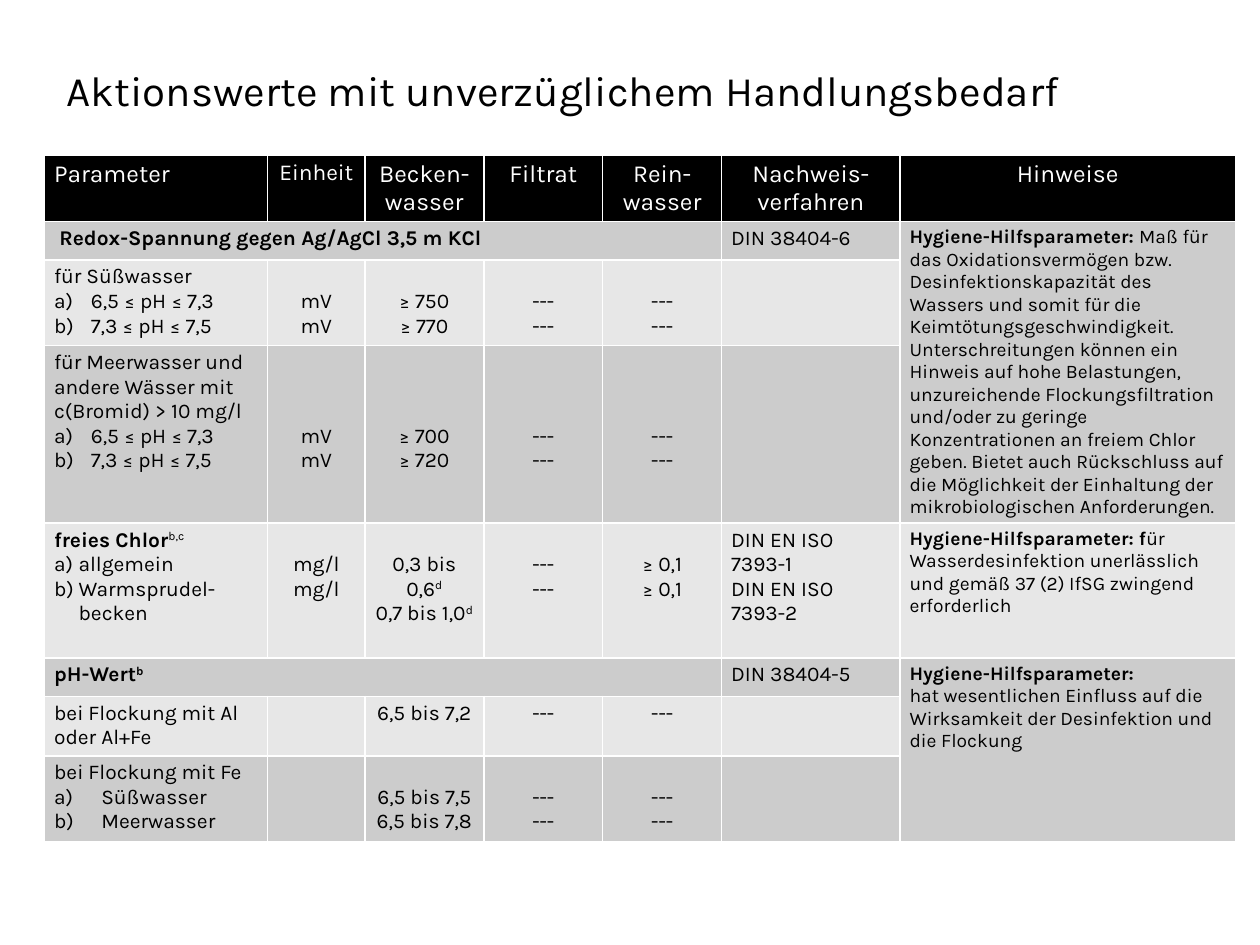
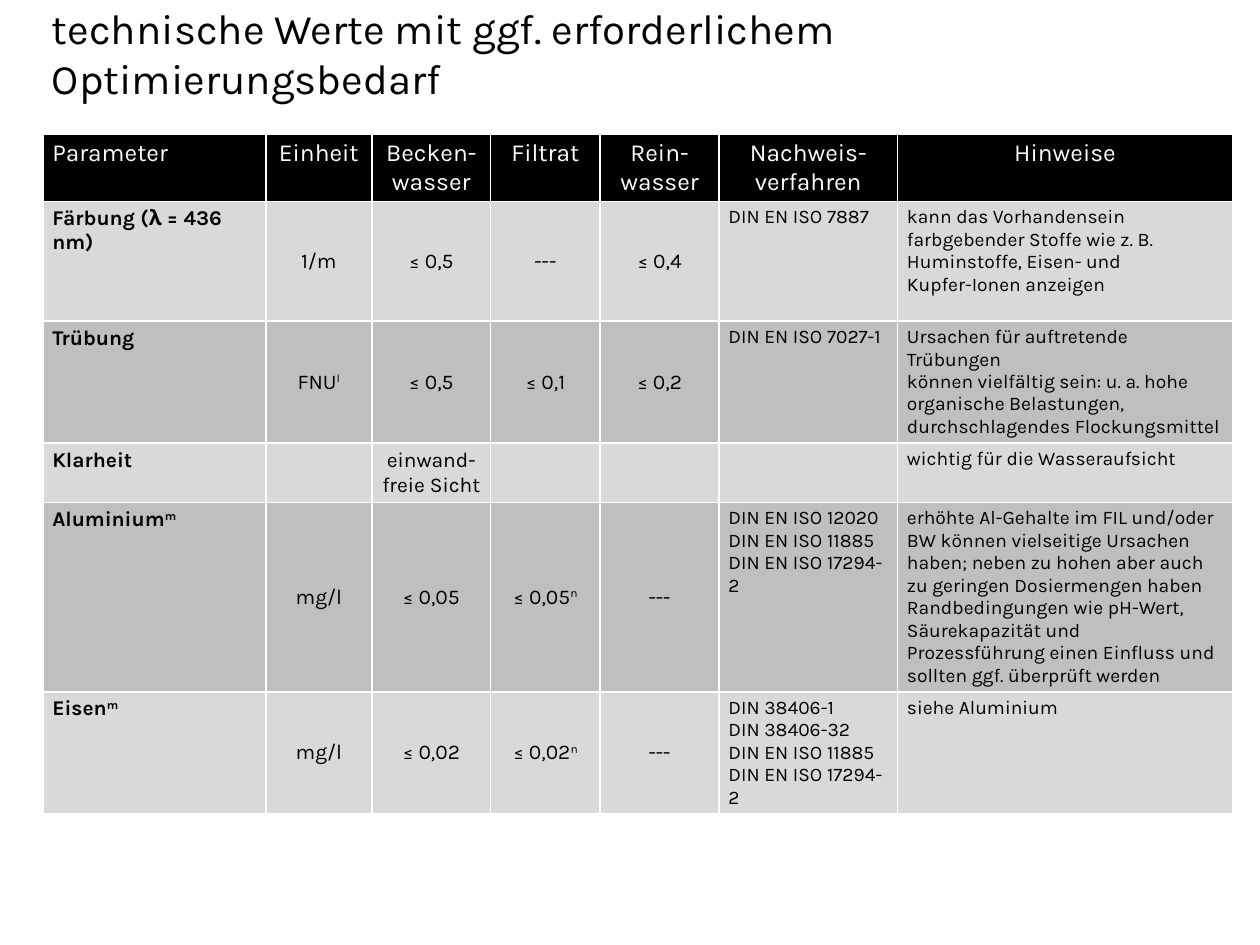
from dataclasses import dataclass

from lxml import etree
from pptx import Presentation
from pptx.dml.color import RGBColor
from pptx.enum import text as tx
from pptx.oxml.ns import qn
from pptx.util import Pt


@dataclass(frozen=True)
class Theme:
    font: str = "Karla"
    ink: str = "000000"
    paper: str = "FFFFFF"
    title: float = 24
    head: float = 14
    body: float = 12
    note: float = 11
    line: float = 14
    side: float = 5.4
    edge: float = 2.7


@dataclass
class Cell:
    """Paragraphs of runs; drop is the count of lines the text starts lower,
    hang numbers all paragraphs but the first."""
    paras: list
    drop: int = 0
    hang: float = 0
    inset: float = 0
    size: float = 0
    across: int = 1
    down: int = 1


@dataclass
class Plan:
    """Layout of one value table."""
    box: tuple
    cols: list
    rows: list
    bands: tuple
    sizes: list
    middle: bool = False


T = Theme()
MID, LEFT = tx.PP_ALIGN.CENTER, tx.PP_ALIGN.LEFT
NONE = "---"


def bold(words):
    return words, "b"


def sup(words, flags=""):
    return words, flags + "s"


def pair(first, second=None, drop=1):
    return Cell([first, second or first], drop=drop)


def rgb(code):
    return RGBColor.from_string(code)


def add_run(para, run, size, color):
    words, flags = run if isinstance(run, tuple) else (run, "")
    part = para.add_run()
    part.text = words
    font = part.font
    font.name, font.size, font.bold = T.font, Pt(size), "b" in flags
    font.color.rgb = rgb(color)
    if "s" in flags:
        part._r.get_or_add_rPr().set("baseline", "30000")


def number(para, hang):
    props = para._p.get_or_add_pPr()
    props.set("marL", str(Pt(hang)))
    props.set("indent", str(-Pt(hang)))
    etree.SubElement(props, qn("a:buFont"), typeface="+mj-lt")
    etree.SubElement(props, qn("a:buAutoNum"), type="alphaLcParenR")


def frame_cell(cell, fill):
    props = cell._tc.get_or_add_tcPr()
    for side in ("lnL", "lnR", "lnT", "lnB"):
        line = etree.SubElement(props, qn("a:" + side), w=str(Pt(1)))
        paint = etree.SubElement(line, qn("a:solidFill"))
        etree.SubElement(paint, qn("a:srgbClr"), val=T.paper)
    cell.fill.solid()
    cell.fill.fore_color.rgb = rgb(fill)
    cell.margin_left = cell.margin_right = Pt(T.side)
    cell.margin_top = cell.margin_bottom = Pt(T.edge)


def fill_cell(cell, data, size, color, align):
    if not data:
        cell.text_frame.paragraphs[0]._p.get_or_add_endParaRPr().set("sz", str(size * 100))
        return
    if not isinstance(data, Cell):
        data = Cell([data])
    cell.margin_left = Pt(T.side + data.inset)
    cell.margin_top = Pt(T.edge + data.drop * T.line)
    frame = cell.text_frame
    for i, runs in enumerate(data.paras):
        para = frame.add_paragraph() if i else frame.paragraphs[0]
        para.alignment = align
        if i and data.hang:
            number(para, data.hang)
        for run in runs if isinstance(runs, list) else [runs]:
            add_run(para, run, data.size or size, color)


def add_title(slide, words, box):
    title = slide.shapes.title
    title.left, title.top, title.width, title.height = map(Pt, box)
    frame = title.text_frame
    frame.auto_size = tx.MSO_AUTO_SIZE.NONE
    frame.word_wrap = True
    frame.vertical_anchor = tx.MSO_ANCHOR.BOTTOM
    para = frame.paragraphs[0]
    para.alignment = LEFT
    add_run(para, words, T.title, T.ink)


def add_grid(slide, plan, data):
    left, top = plan.box
    size = sum(plan.cols), sum(plan.rows)
    grid = slide.shapes.add_table(len(plan.rows), len(plan.cols),
                                  *map(Pt, (left, top, *size))).table
    grid.horz_banding = False
    for col, width in zip(grid.columns, plan.cols):
        col.width = Pt(width)
    for row, height in zip(grid.rows, plan.rows):
        row.height = Pt(height)
    for r, line in enumerate(data):
        for c, item in enumerate(line):
            cell = grid.cell(r, c)
            value = 1 <= c <= 4
            frame_cell(cell, plan.bands[(r - 1) % 2] if r else T.ink)
            if r and value and plan.middle:
                cell.vertical_anchor = tx.MSO_ANCHOR.MIDDLE
            wide = isinstance(item, Cell) and item.across > 1
            center = (value and not wide) or (r == 0 and c > 0)
            fill_cell(cell, item, plan.sizes[c] if r else T.head,
                      T.ink if r else T.paper, MID if center else LEFT)
    for r, line in enumerate(data):
        for c, item in enumerate(line):
            if isinstance(item, Cell) and item.across * item.down > 1:
                end = grid.cell(r + item.down - 1, c + item.across - 1)
                grid.cell(r, c).merge(end)


def header(unit="Einheit"):
    return ["Parameter", unit, "Becken-wasser", "Filtrat", "Rein-wasser",
            "Nachweis- verfahren", "Hinweise"]


def action_slide(slide):
    add_title(slide, "Aktionswerte mit unverzüglichem Handlungsbedarf",
              (31, 26.5, 613.5, 42.5))
    ranges = ["6,5 ≤ pH ≤ 7,3", "7,3 ≤ pH ≤ 7,5"]
    aid = "Hygiene-Hilfsparameter: "
    redox = Cell([
        [bold(aid), "Maß für das Oxidationsvermögen bzw. Desinfektionskapazität "
                    "des Wassers und somit für die"],
        "Keimtötungsgeschwindigkeit.",
        "Unterschreitungen können ein Hinweis auf hohe Belastungen, unzureichende "
        "Flockungsfiltration und/oder zu geringe Konzentrationen an freiem Chlor geben. "
        "Bietet auch Rückschluss auf die Möglichkeit der Einhaltung der",
        "mikrobiologischen Anforderungen."], down=3)
    acid = Cell([[bold(aid.strip())],
                 "hat wesentlichen Einfluss auf die Wirksamkeit der Desinfektion "
                 "und die Flockung"], down=3)
    span = [None] * 4
    data = [
        header(Cell(["Einheit"], size=13)),
        [Cell([[bold("Redox-Spannung gegen Ag/AgCl 3,5 m KCl")]], across=5, inset=3),
         *span, "DIN 38404-6", redox],
        [Cell(["für Süßwasser", *ranges], hang=21), pair("mV"),
         pair("≥ 750", "≥ 770"), pair(NONE), pair(NONE), None, None],
        [Cell(["für Meerwasser und andere Wässer mit c(Bromid) > 10 mg/l", *ranges], hang=21),
         pair("mV", drop=3), pair("≥ 700", "≥ 720", 3),
         pair(NONE, drop=3), pair(NONE, drop=3), None, None],
        [Cell([[bold("freies Chlor"), sup("b,c")], "allgemein", "Warmsprudel-becken"], hang=14),
         pair("mg/l"), pair(["0,3 bis 0,6", sup("d")], ["0,7 bis 1,0", sup("d")]),
         pair(NONE), pair("≥ 0,1"),
         Cell(["DIN EN ISO 7393-1", "DIN EN ISO 7393-2"]),
         [bold(aid + "f"), "ür Wasserdesinfektion unerlässlich und gemäß 37 (2) IfSG "
                           "zwingend erforderlich"]],
        [Cell([[bold("pH-Wert"), sup("b", "b")]], across=5), *span, "DIN 38404-5", acid],
        ["bei Flockung mit Al oder Al+Fe", None, "6,5 bis 7,2", NONE, NONE, None, None],
        [Cell(["bei Flockung mit Fe", "Süßwasser", "Meerwasser"], hang=27), None,
         pair("6,5 bis 7,5", "6,5 bis 7,8"), pair(NONE), pair(NONE), None, None],
    ]
    add_grid(slide, Plan(
        box=(25.5, 88.5), cols=[127.5, 55.5, 68, 68, 68, 102, 191.5],
        rows=[38, 22, 49, 101, 77, 22, 34, 49], bands=("CCCCCC", "E7E7E7"),
        sizes=[T.body] * 6 + [T.note]), data)


def tuning_slide(slide):
    add_title(slide, "technische Werte mit ggf. erforderlichem Optimierungsbedarf",
              (22.5, 26.5, 674.5, 36))
    icp = ["DIN EN ISO 11885", "DIN EN ISO 17294-2"]
    data = [
        header(),
        [[bold("Färbung (λ = 436 nm)")], "1/m", "≤ 0,5", NONE, "≤ 0,4", "DIN EN ISO 7887",
         Cell(["kann das Vorhandensein farbgebender Stoffe wie z. B. Huminstoffe, Eisen- und",
               "Kupfer-Ionen anzeigen"])],
        [[bold("Trübung")], ["FNU", sup("I")], "≤ 0,5", "≤ 0,1", "≤ 0,2", "DIN EN ISO 7027-1",
         Cell(["Ursachen für auftretende Trübungen",
               "können vielfältig sein: u. a. hohe organische Belastungen, "
               "durchschlagendes Flockungsmittel"])],
        [[bold("Klarheit")], None, "einwand-freie Sicht", None, None, None,
         "wichtig für die Wasseraufsicht"],
        [[bold("Aluminium"), sup("m", "b")], "mg/l", "≤ 0,05", ["≤ 0,05", sup("n")], NONE,
         Cell(["DIN EN ISO 12020", *icp]),
         "erhöhte Al-Gehalte im FIL und/oder BW können vielseitige Ursachen haben; neben zu "
         "hohen aber auch zu geringen Dosiermengen haben Randbedingungen wie pH-Wert, "
         "Säurekapazität und Prozessführung einen Einfluss und sollten ggf. überprüft werden"],
        [[bold("Eisen"), sup("m", "b")], "mg/l", "≤ 0,02", ["≤ 0,02", sup("n")], NONE,
         Cell(["DIN 38406-1", "DIN 38406-32", *icp]), "siehe Aluminium"],
    ]
    add_grid(slide, Plan(
        box=(24.5, 77), cols=[127.5, 60.5, 68, 62.5, 68, 102, 191.5],
        rows=[38, 68.5, 69.5, 34, 108, 68.5], bands=("D9D9D9", "BFBFBF"),
        sizes=[T.body] * 5 + [T.note] * 2, middle=True), data)


def main():
    deck = Presentation()
    deck.slide_width, deck.slide_height = Pt(720), Pt(540)
    for build in (action_slide, tuning_slide):
        build(deck.slides.add_slide(deck.slide_layouts[5]))
    deck.save("out.pptx")


if __name__ == "__main__":
    main()
